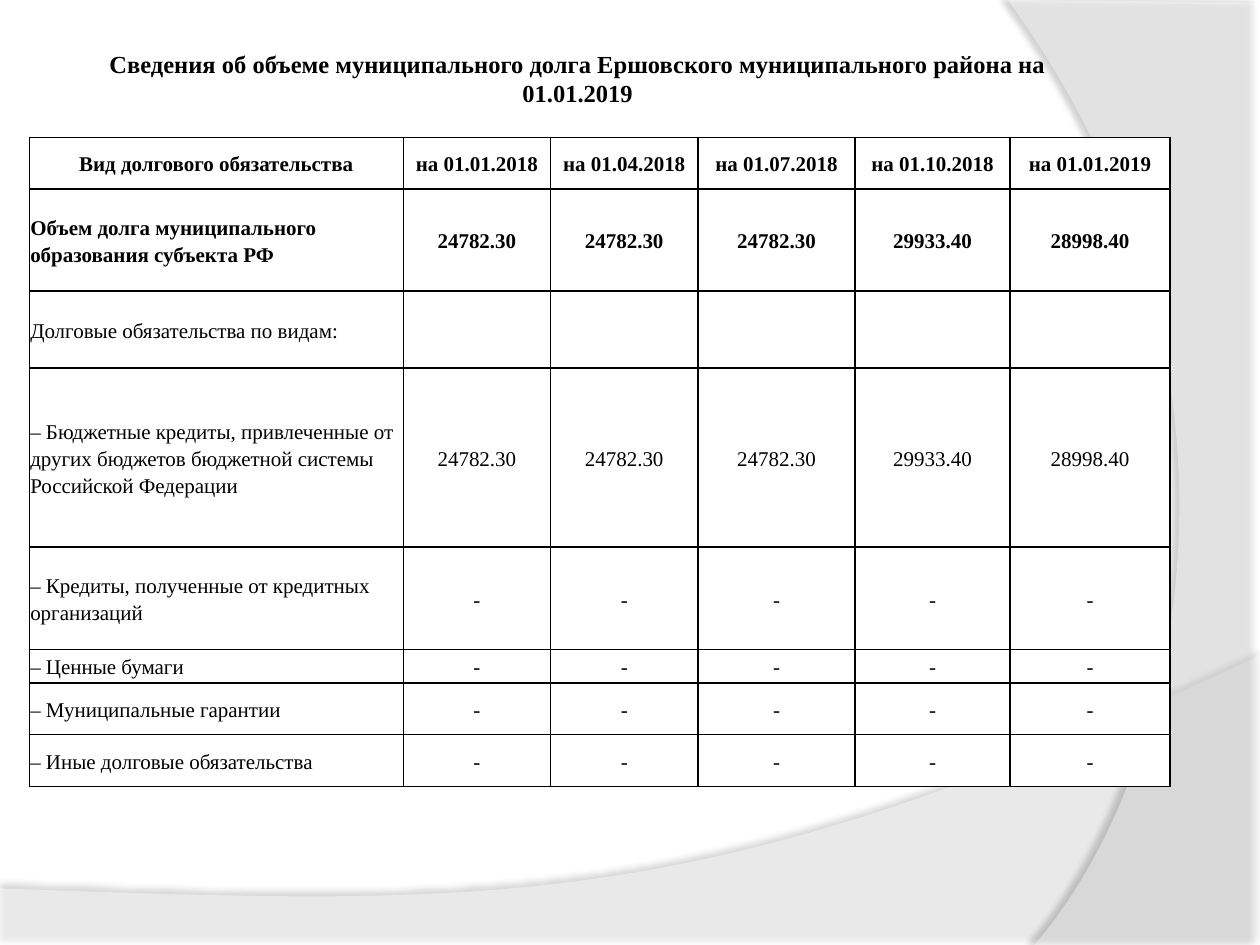
from lxml.etree import SubElement
from pptx import Presentation
from pptx.dml.color import RGBColor
from pptx.enum.text import MSO_ANCHOR, PP_ALIGN
from pptx.oxml.ns import qn
from pptx.util import Cm, Pt

FONT = "Times New Roman"
COLORS = {"paper": "FFFFFF", "ink": "000000"}

TITLE = "Сведения об объеме муниципального долга Ершовского муниципального района на 01.01.2019"
DATES = ["на 01.01.2018", "на 01.04.2018", "на 01.07.2018", "на 01.10.2018", "на 01.01.2019"]
DEBT = ["24782.30"] * 3 + ["29933.40", "28998.40"]
NO_DEBT = ["-"] * 5
DEBT_ROWS = [
    ["Вид долгового обязательcтва", *DATES],
    ["Объем долга муниципального образования субъекта РФ", *DEBT],
    ["Долговые обязательства по видам:", *[""] * 5],
    ["– Бюджетные кредиты, привлеченные от \vдругих бюджетов бюджетной системы \vРоссийской Федерации", *DEBT],
    ["– Кредиты, полученные от кредитных организаций", *NO_DEBT],
    ["– Ценные бумаги", *NO_DEBT],
    ["– Муниципальные гарантии", *NO_DEBT],
    ["– Иные долговые обязательства", *NO_DEBT],
]
COLUMN_WIDTHS = [7.54, 2.97, 2.97, 3.17, 3.12, 3.23]
ROW_HEIGHTS = [1.04, 2.06, 1.55, 3.61, 2.06, 0.68, 1.04, 1.04]
BOLD_ROWS = 2


def rgb(name):
    """Return the named palette colour."""
    return RGBColor.from_string(COLORS[name])


def bezier(start, first, second, end, steps=40):
    """Return points along a cubic curve."""
    points = []
    for step in range(steps + 1):
        t = step / steps
        weights = ((1 - t) ** 3, 3 * t * (1 - t) ** 2, 3 * t**2 * (1 - t), t**3)
        points.append(tuple(
            sum(weight * value for weight, value in zip(weights, axis))
            for axis in zip(start, first, second, end)
        ))
    return points


def set_alpha(color, percent):
    """Set the opacity of a colour element."""
    SubElement(color, qn("a:alpha"), val=str(percent * 1000))


def add_wave(slide, curve, corners, opacity, shadow_opacity, distance, direction):
    """Add a translucent wave with a soft shadow along its curved edge."""
    outline = [(Cm(x), Cm(y)) for x, y in bezier(*curve) + corners]
    builder = slide.shapes.build_freeform(*outline[0], scale=1.0)
    builder.add_line_segments(outline[1:], close=True)
    wave = builder.convert_to_shape()
    wave.fill.solid()
    wave.fill.fore_color.rgb = rgb("paper")
    wave.line.fill.background()
    wave.shadow.inherit = False
    properties = wave._element.spPr
    set_alpha(properties.find(qn("a:solidFill"))[0], opacity)
    shadow = SubElement(
        properties.find(qn("a:effectLst")), qn("a:outerShdw"),
        blurRad=str(Pt(4)), dist=str(Pt(distance)), dir=str(direction * 60000),
        algn="ctr", rotWithShape="0",
    )
    set_alpha(SubElement(shadow, qn("a:srgbClr"), val=COLORS["ink"]), shadow_opacity)


def style_paragraph(paragraph, size, bold, align):
    """Set the font and alignment of a paragraph."""
    paragraph.alignment = align
    paragraph.font.name = FONT
    paragraph.font.size = Pt(size)
    paragraph.font.bold = bold
    paragraph.font.color.rgb = rgb("ink")


def add_title(slide):
    """Add the centred slide title."""
    title = slide.shapes.add_textbox(Cm(1.27), Cm(0.76), Cm(20.75), Cm(1.63))
    frame = title.text_frame
    frame.word_wrap = True
    frame.vertical_anchor = MSO_ANCHOR.MIDDLE
    frame.margin_left = frame.margin_right = Cm(0.13)
    frame.margin_top = frame.margin_bottom = Cm(0.13)
    frame.text = TITLE
    style_paragraph(frame.paragraphs[0], 14, True, PP_ALIGN.CENTER)


def add_borders(cell):
    """Draw a thin border on each side of a cell."""
    properties = cell._tc.get_or_add_tcPr()
    for side in ("lnL", "lnR", "lnT", "lnB"):
        border = SubElement(properties, qn(f"a:{side}"), w=str(Pt(1)))
        fill = SubElement(border, qn("a:solidFill"))
        SubElement(fill, qn("a:srgbClr"), val=COLORS["ink"])


def fill_cell(cell, text, bold, align):
    """Style a table cell and write its text."""
    add_borders(cell)
    cell.fill.solid()
    cell.fill.fore_color.rgb = rgb("paper")
    cell.vertical_anchor = MSO_ANCHOR.MIDDLE
    cell.margin_left = cell.margin_right = Cm(0.02)
    cell.margin_top = cell.margin_bottom = Cm(0.02)
    cell.text_frame.text = text
    paragraph = cell.text_frame.paragraphs[0]
    paragraph.line_spacing = 1.15
    style_paragraph(paragraph, 12, bold, align)


def add_debt_table(slide):
    """Add the table of debt by kind and date."""
    table = slide.shapes.add_table(
        len(ROW_HEIGHTS), len(COLUMN_WIDTHS), Cm(0.59), Cm(2.77),
        Cm(sum(COLUMN_WIDTHS)), Cm(sum(ROW_HEIGHTS)),
    ).table
    table.first_row = table.horz_banding = False
    for column, width in zip(table.columns, COLUMN_WIDTHS):
        column.width = Cm(width)
    for row, height in zip(table.rows, ROW_HEIGHTS):
        row.height = Cm(height)
    for r, texts in enumerate(DEBT_ROWS):
        for c, text in enumerate(texts):
            align = PP_ALIGN.LEFT if c == 0 and r > 0 else PP_ALIGN.CENTER
            fill_cell(table.cell(r, c), text, r < BOLD_ROWS, align)


def main():
    """Build the municipal debt slide."""
    presentation = Presentation()
    presentation.slide_width = Cm(25.4)
    presentation.slide_height = Cm(19.05)
    slide = presentation.slides.add_slide(presentation.slide_layouts[6])
    slide.background.fill.solid()
    slide.background.fill.fore_color.rgb = rgb("paper")
    add_wave(
        slide, [(25.4, 13.21), (14.2, 18.52), (9.93, 18.26), (0, 17.91)],
        [(0, 19.08), (25.4, 19.08)], 45, 35, 3.5, 270,
    )
    add_wave(
        slide, [(20.85, 19.05), (23.75, 15.72), (25.86, 7.62), (20.32, 0)],
        [(25.4, 0.05), (25.4, 19.05)], 40, 45, 4, 180,
    )
    add_title(slide)
    add_debt_table(slide)
    presentation.save("out.pptx")


if __name__ == "__main__":
    main()
